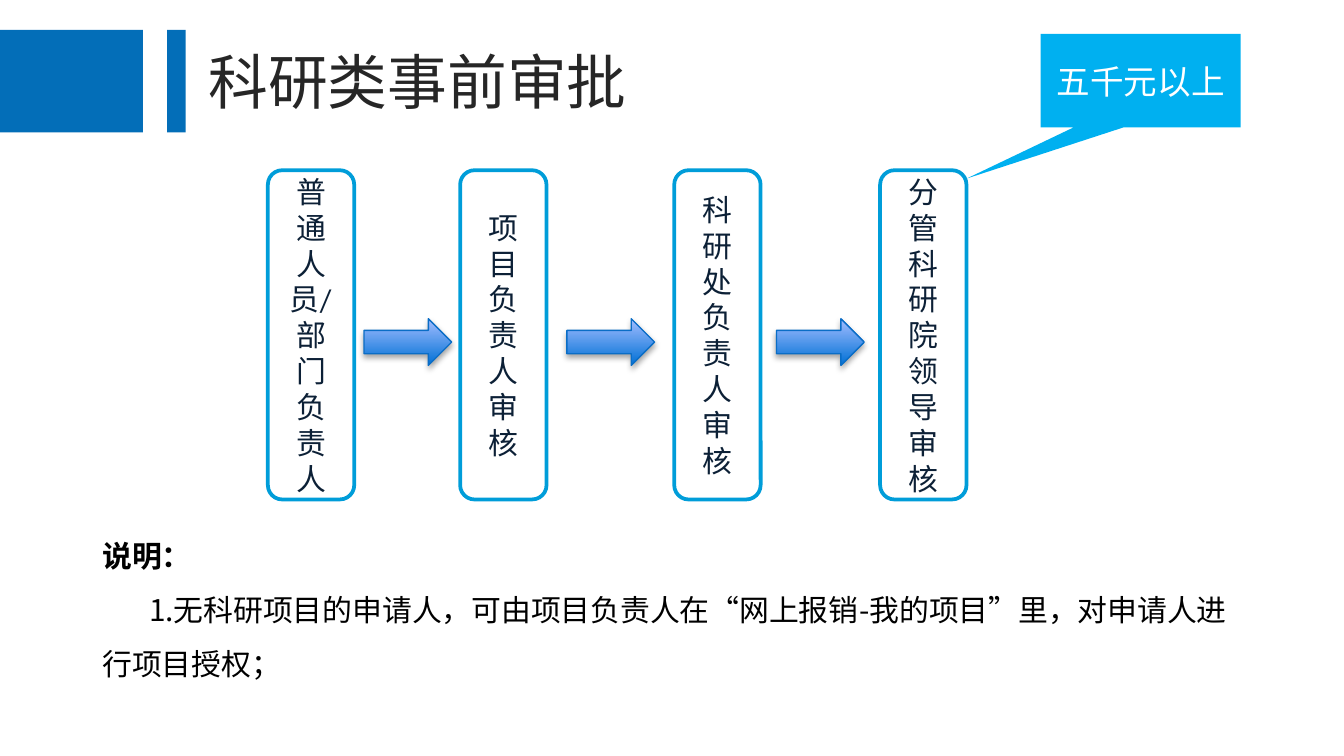
"""Build the approval-flow slide for research spending."""
from dataclasses import dataclass

from lxml import etree
from pptx import Presentation
from pptx.dml.color import RGBColor
from pptx.enum.shapes import MSO_SHAPE
from pptx.enum.text import MSO_ANCHOR, MSO_AUTO_SIZE, PP_ALIGN
from pptx.oxml.ns import qn
from pptx.util import Pt

RECTANGLE = MSO_SHAPE.RECTANGLE
ROUNDED = MSO_SHAPE.ROUNDED_RECTANGLE
ARROW = MSO_SHAPE.RIGHT_ARROW
CALLOUT = MSO_SHAPE.RECTANGULAR_CALLOUT
TOP, MIDDLE = MSO_ANCHOR.TOP, MSO_ANCHOR.MIDDLE
LEFT, CENTER = PP_ALIGN.LEFT, PP_ALIGN.CENTER


@dataclass(frozen=True)
class Theme:
    bar: str = "036EB8"
    title: str = "262626"
    body: str = "000000"
    step_text: str = "0C2036"
    step_line: str = "009DD9"
    white: str = "FFFFFF"
    callout: str = "00B0F0"
    arrow_dark: str = "0070D5"
    arrow_light: str = "A3BDFF"
    arrow_line: str = "0A6DC6"
    title_size: int = 32
    callout_size: int = 18
    text_size: int = 16
    font: str = "Noto Sans CJK SC"
    step_font: str = "League Spartan"


theme = Theme()


def add_box(kind, left, top, width, height, fill):
    shape = slide.shapes.add_shape(kind, Pt(left), Pt(top), Pt(width), Pt(height))
    shape.shadow.inherit = False
    shape.fill.solid()
    shape.fill.fore_color.rgb = RGBColor.from_string(fill)
    shape.line.fill.background()
    return shape


def write(paragraph, text, size, color, align, font=theme.font):
    paragraph.text = text
    paragraph.alignment = align
    paragraph.font.name = font
    paragraph.font.size = Pt(size)
    paragraph.font.color.rgb = RGBColor.from_string(color)
    defaults = paragraph._p.pPr.find(qn("a:defRPr"))
    etree.SubElement(defaults, qn("a:ea")).set("typeface", theme.font)


presentation = Presentation()
presentation.slide_width, presentation.slide_height = Pt(720), Pt(405)
slide = presentation.slides.add_slide(presentation.slide_layouts[1])

for left, width in ((0, 76.5), (89.5, 10)):
    add_box(RECTANGLE, left, 16, width, 55, theme.bar)

title, body = slide.placeholders
for placeholder, left, top, width, height in (
    (title, 104.4, 20.2, 447, 46),
    (body, 47.7, 275, 623.5, 94.3),
):
    placeholder.left, placeholder.top = Pt(left), Pt(top)
    placeholder.width, placeholder.height = Pt(width), Pt(height)
    placeholder.text_frame.auto_size = MSO_AUTO_SIZE.NONE
    placeholder.text_frame.vertical_anchor = TOP
    placeholder.text_frame.word_wrap = True

write(title.text_frame.paragraphs[0], "科研类事前审批", theme.title_size, theme.title, LEFT)

heading = body.text_frame.paragraphs[0]
note = body.text_frame.add_paragraph()
for paragraph, text, indent, bold in (
    (heading, "说明：", 0, True),
    (note, "1.无科研项目的申请人，可由项目负责人在“网上报销-我的项目”里，对申请人进行项目授权；", 25, False),
):
    paragraph.line_spacing = 1.5
    paragraph.space_before = Pt(0)
    write(paragraph, text, theme.text_size, theme.body, LEFT)
    paragraph.font.bold = bold
    properties = paragraph._p.pPr
    properties.set("marL", "0")
    properties.set("indent", str(Pt(indent)))
    properties.find(qn("a:defRPr")).addprevious(etree.Element(qn("a:buNone")))

for left, text in (
    (143.5, "普通人员/部门负责人"),
    (246.5, "项目负责人审核"),
    (361.2, "科研处负责人审核"),
    (471.5, "分管科研院领导审核"),
):
    step = add_box(ROUNDED, left, 91.2, 46.3, 176.4, theme.white)
    step.line.color.rgb = RGBColor.from_string(theme.step_line)
    step.line.width = Pt(2)
    step.text_frame.word_wrap = True
    step.text_frame.vertical_anchor = MIDDLE
    write(step.text_frame.paragraphs[0], text, theme.text_size, theme.step_text, CENTER, theme.step_font)

for left in (195, 303.7, 416):
    arrow = slide.shapes.add_shape(ARROW, Pt(left), Pt(170.8), Pt(47), Pt(25))
    arrow.fill.gradient()
    arrow.fill.gradient_angle = 90
    for stop, color in zip(arrow.fill.gradient_stops, (theme.arrow_dark, theme.arrow_light)):
        stop.color.rgb = RGBColor.from_string(color)
    arrow.line.color.rgb = RGBColor.from_string(theme.arrow_line)
    arrow.line.width = Pt(0.75)

callout = add_box(CALLOUT, 557.5, 18.2, 107.2, 50, theme.callout)
callout.adjustments[0], callout.adjustments[1] = -0.87, 1.05
callout.text_frame.word_wrap = True
callout.text_frame.vertical_anchor = MIDDLE
write(callout.text_frame.paragraphs[0], "五千元以上", theme.callout_size, theme.white, CENTER)

presentation.save("out.pptx")
